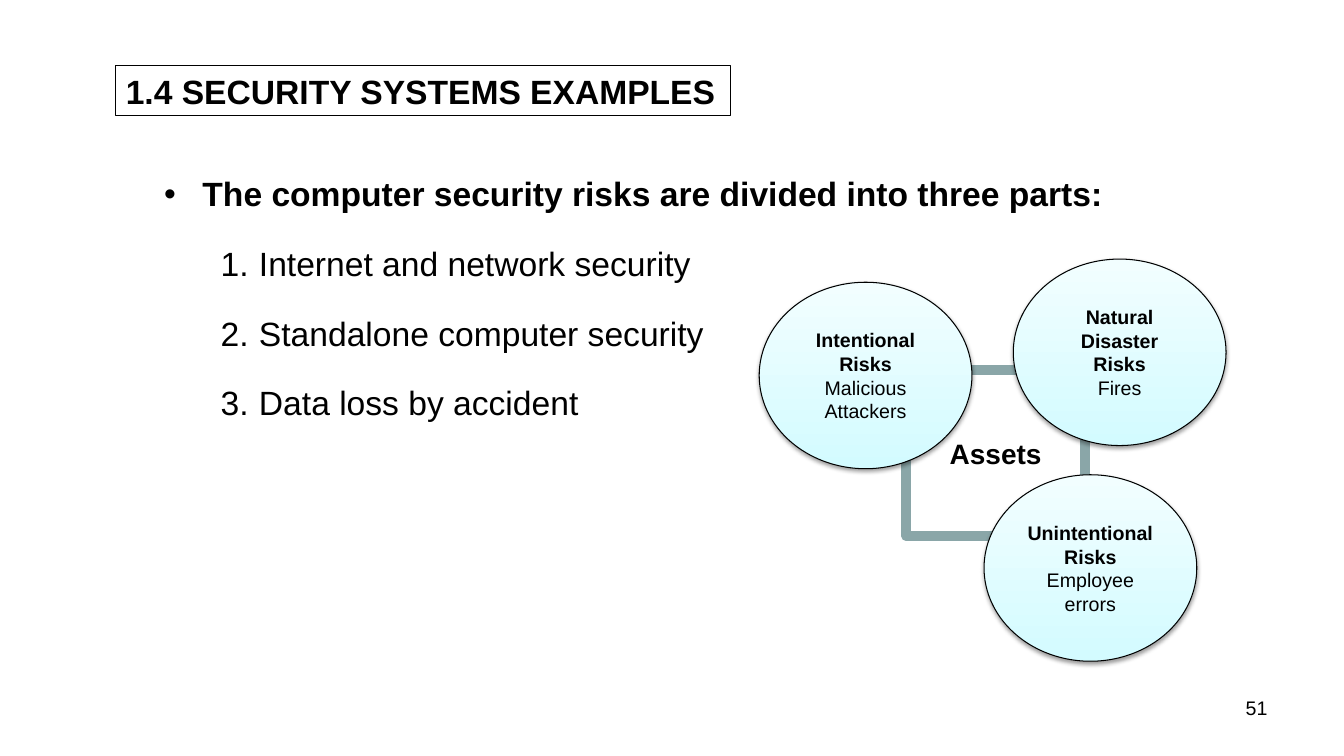
from dataclasses import dataclass

from lxml import etree
from pptx import Presentation
from pptx import util as u
from pptx.dml.color import RGBColor
from pptx.enum import shapes, text
from pptx.oxml.ns import qn

PX = 9144
FONT = "Arial"
COLORS = {
    "ink": "000000",
    "frame": "8AA6A8",
    "risk_bottom": "D3FBFF",
    "risk_top": "F2FEFF",
}


@dataclass
class Box:
    x: int
    y: int
    w: int
    h: int

    def emu(self) -> list[int]:
        return [v * PX for v in (self.x, self.y, self.w, self.h)]


@dataclass
class Risk:
    x: int
    y: int
    name: str
    example: str


@dataclass
class Point:
    label: str
    indent: int
    bullet: tuple[str, str, str]
    bold: bool = False


NUMBERED = ("a:buAutoNum", "type", "arabicPeriod")
POINTS = [
    Point("The computer security risks are divided into three parts:",
          38, ("a:buChar", "char", "•"), True),
    Point("Internet and network security", 94, NUMBERED),
    Point("Standalone computer security", 94, NUMBERED),
    Point("Data loss by accident", 94, NUMBERED),
]
RISKS = [
    Risk(1005, 257, "Natural Disaster Risks", "Fires"),
    Risk(976, 471, "Unintentional Risks", "Employee errors"),
    Risk(753, 280, "Intentional Risks", "Malicious Attackers"),
]
RISK_W, RISK_H = 211, 185
HANGING = 38


def rgb(name: str) -> RGBColor:
    return RGBColor.from_string(COLORS[name])


def write(p, label: str, size: int, bold: bool, align) -> None:
    p.text = label
    p.alignment = align
    for r in p.runs:
        r.font.name = FONT
        r.font.size = u.Pt(size)
        r.font.bold = bold
        r.font.color.rgb = rgb("ink")


def add_text(slide, box: Box):
    tf = slide.shapes.add_textbox(*box.emu()).text_frame
    tf.word_wrap = True
    return tf


def add_outline(slide, kind, box: Box, color: str, width: float):
    s = slide.shapes.add_shape(kind, *box.emu())
    s.shadow.inherit = False
    s.fill.background()
    s.line.color.rgb = rgb(color)
    s.line.width = u.Pt(width)
    s.text_frame.word_wrap = True
    s.text_frame.vertical_anchor = text.MSO_ANCHOR.MIDDLE
    return s


def add_points(slide, box: Box, points: list[Point]) -> None:
    tf = add_text(slide, box)
    for i, point in enumerate(points):
        p = tf.add_paragraph() if i else tf.paragraphs[0]
        write(p, point.label, 24, point.bold, text.PP_ALIGN.JUSTIFY)
        p.line_spacing = 1.5
        p.space_before = u.Pt(6.5)
        pPr = p._p.get_or_add_pPr()
        pPr.set("marL", str(point.indent * PX))
        pPr.set("indent", str(-HANGING * PX))
        etree.SubElement(pPr, qn("a:buFont"), typeface=FONT)
        tag, key, value = point.bullet
        etree.SubElement(pPr, qn(tag), {key: value})


def add_shadow(s) -> None:
    effects = s._element.spPr.find(qn("a:effectLst"))
    shadow = etree.SubElement(
        effects, qn("a:outerShdw"), blurRad=str(u.Pt(3.1)),
        dist=str(u.Pt(1.6)), dir="5400000", rotWithShape="0")
    color = etree.SubElement(shadow, qn("a:srgbClr"), val=COLORS["ink"])
    etree.SubElement(color, qn("a:alpha"), val="38000")


def add_risk(slide, risk: Risk) -> None:
    box = Box(risk.x, risk.y, RISK_W, RISK_H)
    s = add_outline(slide, shapes.MSO_SHAPE.OVAL, box, "ink", 0.75)
    s.fill.gradient()
    s.fill.gradient_angle = 90
    for stop, color in zip(s.fill.gradient_stops, ("risk_bottom", "risk_top")):
        stop.color.rgb = rgb(color)
    add_shadow(s)
    tf = s.text_frame
    write(tf.paragraphs[0], risk.name, 14, True, text.PP_ALIGN.CENTER)
    write(tf.add_paragraph(), risk.example, 14, False, text.PP_ALIGN.CENTER)


def main() -> None:
    prs = Presentation()
    prs.slide_width, prs.slide_height = 1333 * PX, 750 * PX
    slide = prs.slides.add_slide(prs.slide_layouts[6])

    add_points(slide, Box(153, 147, 1065, 274), POINTS)

    title = add_outline(slide, shapes.MSO_SHAPE.RECTANGLE,
                        Box(115, 65, 610, 50), "ink", 0.75)
    title.text_frame.word_wrap = False
    write(title.text_frame.paragraphs[0], "1.4 SECURITY SYSTEMS EXAMPLES",
          24, True, text.PP_ALIGN.LEFT)

    number = add_text(slide, Box(956, 685, 311, 52))
    write(number.paragraphs[0], "51", 14, False, text.PP_ALIGN.RIGHT)

    assets = add_outline(slide, shapes.MSO_SHAPE.RECTANGLE,
                         Box(899, 367, 177, 165), "frame", 7)
    etree.SubElement(assets._element.spPr.find(qn("a:ln")), qn("a:round"))
    write(assets.text_frame.paragraphs[0], "Assets", 20, True,
          text.PP_ALIGN.CENTER)

    for risk in RISKS:
        add_risk(slide, risk)

    prs.save("out.pptx")


if __name__ == "__main__":
    main()
